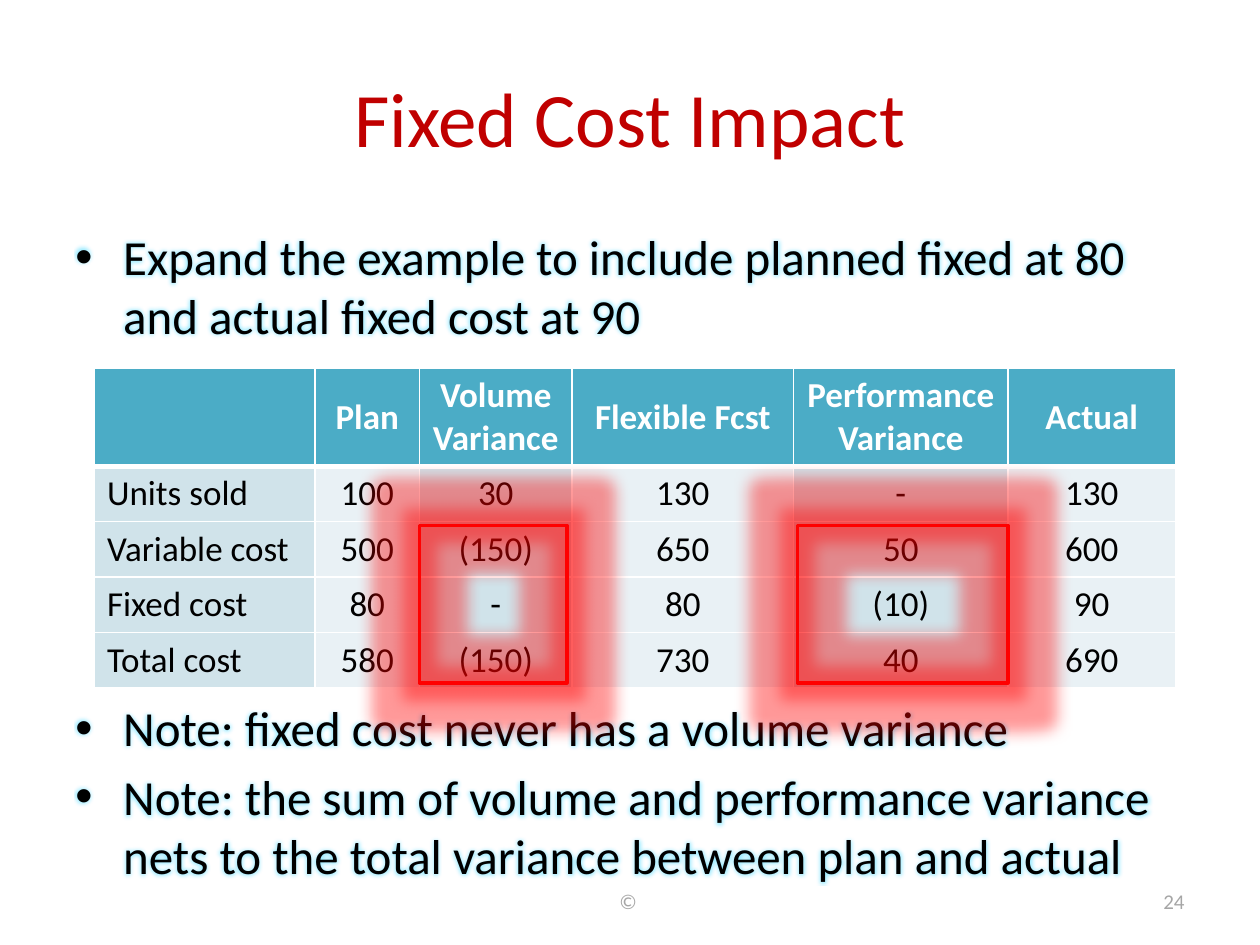
from lxml import etree
from pptx import Presentation
from pptx.dml.color import RGBColor
from pptx.enum.shapes import MSO_SHAPE
from pptx.enum.text import MSO_ANCHOR, PP_ALIGN
from pptx.oxml.ns import qn
from pptx.util import Inches, Pt

LEFT, CENTER, RIGHT = PP_ALIGN.LEFT, PP_ALIGN.CENTER, PP_ALIGN.RIGHT
TOP, MIDDLE = MSO_ANCHOR.TOP, MSO_ANCHOR.MIDDLE
RECTANGLE = MSO_SHAPE.RECTANGLE

TITLE = "Fixed Cost Impact"
# text, space before in points; the second bullet starts below the table
BULLETS = [
    ("Expand the example to include planned fixed at 80 and actual fixed cost at 90", 5.6),
    ("Note: fixed cost never has a volume variance", 202),
    ("Note: the sum of volume and performance variance nets to the total "
     "variance between plan and actual", 5.6),
]
ROWS = [
    ("", "Plan", "Volume Variance", "Flexible Fcst", "Performance Variance", "Actual"),
    ("Units sold", "100", "30", "130", "-", "130"),
    ("Variable cost", "500", "(150)", "650", "50", "600"),
    ("Fixed cost", "80", "-", "80", "(10)", "90"),
    ("Total cost", "580", "(150)", "730", "40", "690"),
]
COLUMN_WIDTHS = [1.75, 0.83, 1.21, 1.76, 1.7, 1.33]
HEADER_HEIGHT, ROW_HEIGHT = 0.78, 0.44
HEADER_FILL, BAND_FILLS = "4BACC6", ("D0E3EA", "E9F1F5")
FOOTERS = [("© ", (3.42, 6.95, 3.17, 0.4), CENTER), ("24", (7.17, 6.95, 2.33, 0.4), RIGHT)]
HIGHLIGHTS = [(3.33, 4.17, 1.17, 1.25), (6.33, 4.17, 1.67, 1.25)]


def color(value):
    return RGBColor.from_string(value)


def inches(box):
    return [Inches(length) for length in box]


def write(para, text, size, ink, align=LEFT, bold=False):
    para.alignment = align
    span = para.add_run()
    span.text = text
    formats = {"size": Pt(size), "name": "Calibri", "bold": bold}
    for name, value in formats.items():
        setattr(span.font, name, value)
    span.font.color.rgb = color(ink)
    return span


def add_text_frame(page, box, anchor):
    frame = page.shapes.add_textbox(*inches(box)).text_frame
    frame.word_wrap = True
    frame.vertical_anchor = anchor
    return frame


def glow_effect(ink, radius, alpha):
    effects = etree.Element(qn("a:effectLst"))
    glow = etree.SubElement(effects, qn("a:glow"), rad=str(Pt(radius)))
    shade = etree.SubElement(glow, qn("a:srgbClr"), val=ink)
    etree.SubElement(shade, qn("a:alpha"), val=str(alpha * 1000))
    return effects


def add_bullet(para, text, space_before):
    para.space_before = Pt(space_before)
    span = write(para, text, 28, "000000")
    props = para._p.get_or_add_pPr()
    props.set("marL", str(Inches(0.38)))
    props.set("indent", str(-Inches(0.38)))
    etree.SubElement(props, qn("a:buFont"), typeface="Arial")
    etree.SubElement(props, qn("a:buChar"), char="•")
    fill = span.font._element.find(qn("a:solidFill"))
    fill.addnext(glow_effect("00CCFF", 5, 40))


def set_borders(cell, widths):
    props = cell._tc.get_or_add_tcPr()
    for side, width in widths.items():
        line = etree.SubElement(props, qn("a:ln" + side), w=str(Pt(width)))
        fill = etree.SubElement(line, qn("a:solidFill"))
        etree.SubElement(fill, qn("a:srgbClr"), val="FFFFFF")


def add_cost_table(page):
    height = HEADER_HEIGHT + ROW_HEIGHT * (len(ROWS) - 1)
    box = inches((0.75, 2.92, sum(COLUMN_WIDTHS), height))
    table = page.shapes.add_table(len(ROWS), len(COLUMN_WIDTHS), *box).table
    for column, width in zip(table.columns, COLUMN_WIDTHS):
        column.width = Inches(width)
    for r, row in enumerate(ROWS):
        header = r == 0
        table.rows[r].height = Inches(HEADER_HEIGHT if header else ROW_HEIGHT)
        for c, text in enumerate(row):
            cell = table.cell(r, c)
            set_borders(cell, {"L": 1, "R": 1, "T": 3 if r == 1 else 1, "B": 3 if header else 1})
            cell.fill.solid()
            cell.fill.fore_color.rgb = color(HEADER_FILL if header else BAND_FILLS[c % 2])
            cell.vertical_anchor = MIDDLE if header else TOP
            if text:
                write(cell.text_frame.paragraphs[0], text, 20,
                      "FFFFFF" if header else "000000",
                      CENTER if header or c else LEFT, header)


def add_highlight(page, box):
    shape = page.shapes.add_shape(RECTANGLE, *inches(box))
    shape.fill.background()
    shape.line.color.rgb = color("FF0000")
    shape.line.width = Pt(2)
    shape._element.spPr.append(glow_effect("FF0000", 18, 40))


def main():
    deck = Presentation()
    deck.slide_width, deck.slide_height = Inches(10), Inches(7.5)
    page = deck.slides.add_slide(deck.slide_layouts[5])

    title = page.shapes.title
    title.left, title.top, title.width, title.height = inches((0.5, 0.3, 9, 1.25))
    title.text_frame.vertical_anchor = MIDDLE
    write(title.text_frame.paragraphs[0], TITLE, 44, "C00000", CENTER)

    body = add_text_frame(page, (0.5, 1.75, 9, 4.95), TOP)
    for i, (text, space_before) in enumerate(BULLETS):
        add_bullet(body.add_paragraph() if i else body.paragraphs[0], text, space_before)

    add_cost_table(page)
    for text, box, align in FOOTERS:
        write(add_text_frame(page, box, MIDDLE).paragraphs[0], text, 12, "A6A6A6", align)
    for box in HIGHLIGHTS:
        add_highlight(page, box)
    deck.save("out.pptx")


if __name__ == "__main__":
    main()
